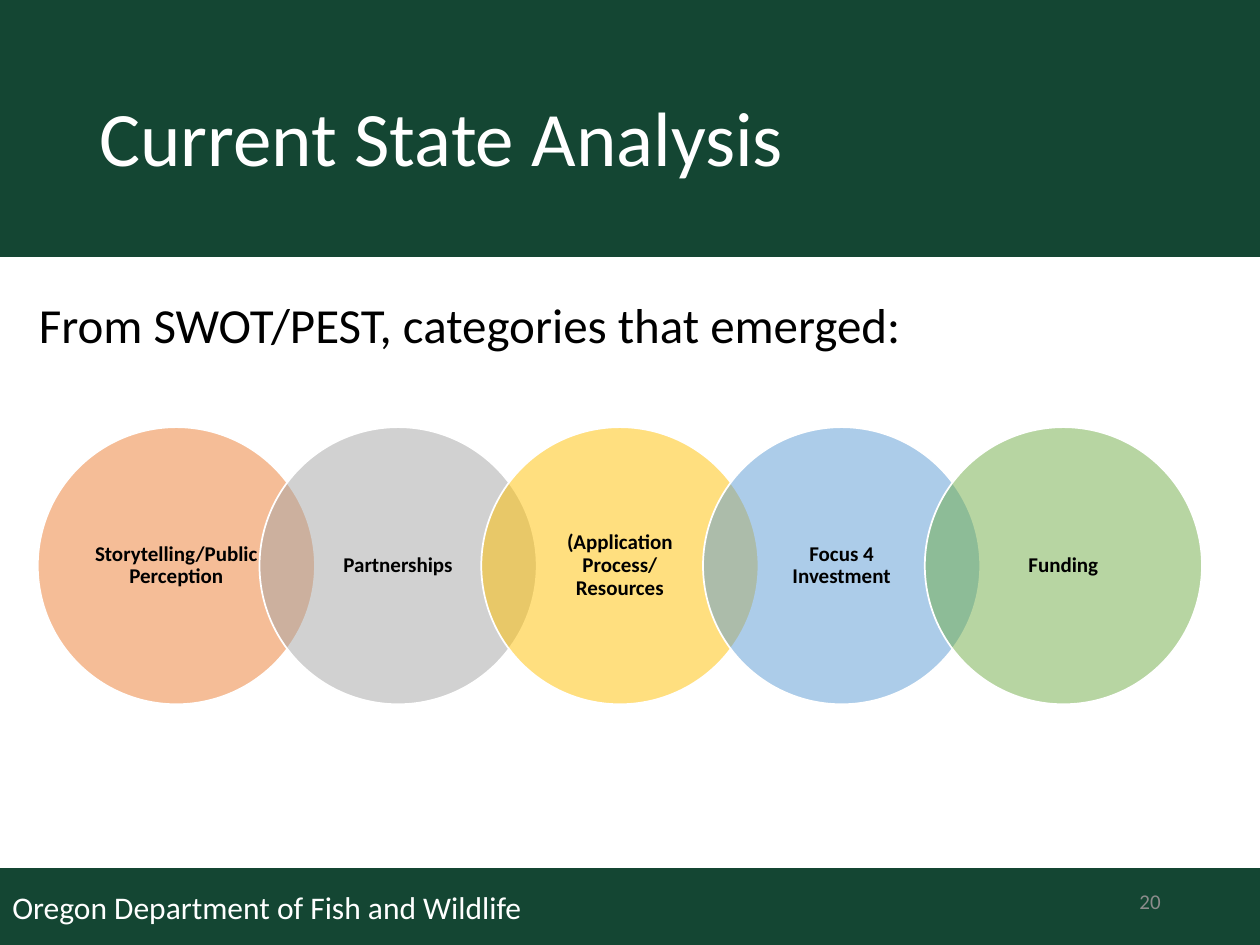
from lxml.etree import SubElement
from pptx import Presentation
from pptx.dml.color import RGBColor
from pptx.enum.shapes import MSO_SHAPE as Shape
from pptx.enum.text import MSO_ANCHOR as Anchor, PP_ALIGN as Align
from pptx.oxml.ns import qn
from pptx.util import Inches, Pt

WIDTH, HEIGHT = 10, 7.5
GREEN, WHITE, BLACK, GREY = "144633", "FFFFFF", "000000", "8C8C8C"
TITLE = "Current State Analysis"
LEAD = "From SWOT/PEST, categories that emerged:"
FOOTER = "Oregon Department of Fish and Wildlife"
PAGE_NUMBER = "20"
CATEGORIES = [
    ("Storytelling/Public Perception", "ED7D31"),
    ("Partnerships", "A5A5A5"),
    ("(Application Process/ Resources", "FFC000"),
    ("Focus 4 Investment", "5B9BD5"),
    ("Funding", "70AD47"),
]
CIRCLE_LEFT, CIRCLE_TOP, DIAMETER = 0.3, 3.39, 2.2
CIRCLE_STEP = DIAMETER * 0.8  # neighbours overlap by a fifth
FOOTER_HEIGHT = 0.6

BANNER_CORNERS = [(-0.24, 2.04), (-0.2, -0.06), (10.21, -0.06), (10.25, 1.67)]
# Each wave section: two control points and an end point
BANNER_WAVE = [
    ((9.78, 2.02), (8.7, 2.08), (7.39, 2.07)),
    ((6.08, 2.05), (3.66, 1.61), (2.38, 1.61)),
    ((0.98, 1.57), (-0.24, 2.04), (-0.24, 2.04)),
]
CURVE_STEPS = 24


def color(hex_string):
    return RGBColor.from_string(hex_string)


def paint(shape, fill, line, line_width):
    shape.shadow.inherit = False
    shape.fill.solid()
    shape.fill.fore_color.rgb = color(fill)
    shape.line.color.rgb = color(line)
    shape.line.width = Pt(line_width)


def write(shape, text, size, text_color, align=Align.LEFT, anchor=Anchor.MIDDLE,
          bold=False, spacing=1.0):
    frame = shape.text_frame
    frame.word_wrap = True
    frame.vertical_anchor = anchor
    paragraph = frame.paragraphs[0]
    paragraph.text = text
    paragraph.alignment = align
    paragraph.line_spacing = spacing
    font = paragraph.font
    font.name, font.size, font.bold = "Calibri", Pt(size), bold
    font.color.rgb = color(text_color)
    return paragraph


def add_text(slide, box, *args, **options):
    shape = slide.shapes.add_textbox(*map(Inches, box))
    return write(shape, *args, **options)


def curve_points(start, control_1, control_2, end):
    """Sample a cubic Bézier curve, leaving out its start."""
    for step in range(1, CURVE_STEPS + 1):
        t = step / CURVE_STEPS
        weights = (1 - t) ** 3, 3 * t * (1 - t) ** 2, 3 * t * t * (1 - t), t ** 3
        points = start, control_1, control_2, end
        yield tuple(sum(w * p[axis] for w, p in zip(weights, points)) for axis in (0, 1))


def add_banner(slide):
    outline = list(BANNER_CORNERS)
    for section in BANNER_WAVE:
        outline.extend(curve_points(outline[-1], *section))
    builder = slide.shapes.build_freeform(*outline[0], scale=Inches(1))
    builder.add_line_segments(outline[1:], close=True)
    paint(builder.convert_to_shape(), GREEN, GREEN, 6)


def add_footer(slide):
    box = (0, HEIGHT - FOOTER_HEIGHT, WIDTH, FOOTER_HEIGHT)
    bar = slide.shapes.add_shape(Shape.RECTANGLE, *map(Inches, box))
    paint(bar, GREEN, GREEN, 1)
    write(bar, FOOTER, 18, WHITE)


def add_circle(slide, index, label, fill):
    box = (CIRCLE_LEFT + index * CIRCLE_STEP, CIRCLE_TOP, DIAMETER, DIAMETER)
    circle = slide.shapes.add_shape(Shape.OVAL, *map(Inches, box))
    paint(circle, fill, WHITE, 1)
    fill_color = circle._element.spPr.find(qn("a:solidFill"))[0]
    SubElement(fill_color, qn("a:alpha"), val="50000")
    frame = circle.text_frame
    frame.margin_left = frame.margin_right = Inches(0.12)
    frame.margin_top = frame.margin_bottom = Inches(0.02)
    write(circle, label, 12, BLACK, Align.CENTER, bold=True, spacing=0.9)


def main():
    presentation = Presentation()
    presentation.slide_width, presentation.slide_height = Inches(WIDTH), Inches(HEIGHT)
    slide = presentation.slides.add_slide(presentation.slide_layouts[6])
    add_footer(slide)
    add_banner(slide)
    for index, (label, fill) in enumerate(CATEGORIES):
        add_circle(slide, index, label, fill)
    add_text(slide, (0.69, 0.4, 8.62, 1.45), TITLE, 44, WHITE, spacing=0.9)
    lead = add_text(slide, (0.21, 2.34, 7.33, 0.71), LEAD, 28, BLACK,
                    anchor=Anchor.TOP, spacing=0.9)
    lead.space_before = Pt(10)
    add_text(slide, (7.06, 6.95, 2.25, 0.4), PAGE_NUMBER, 12, GREY, Align.RIGHT)
    presentation.save("out.pptx")


if __name__ == "__main__":
    main()
